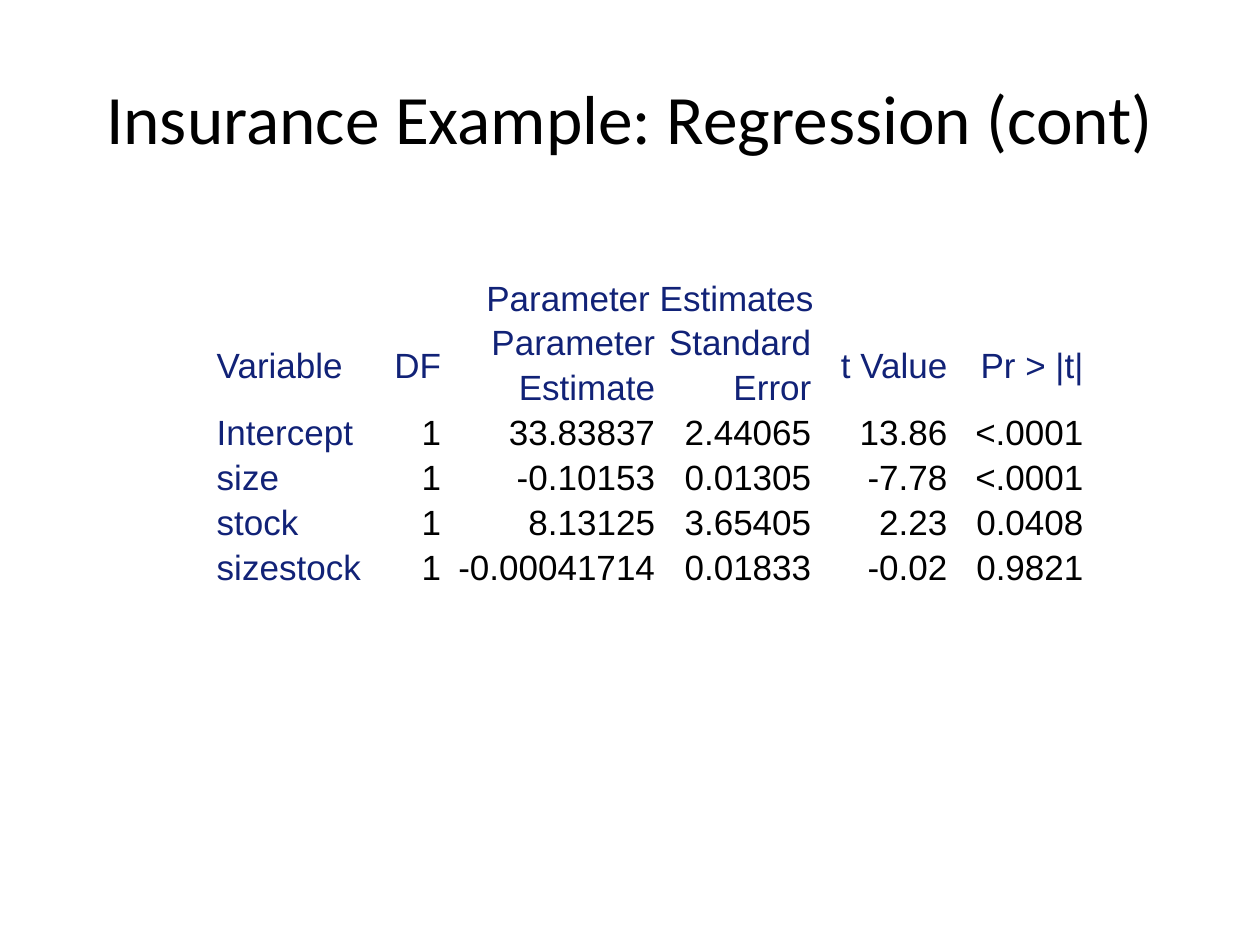
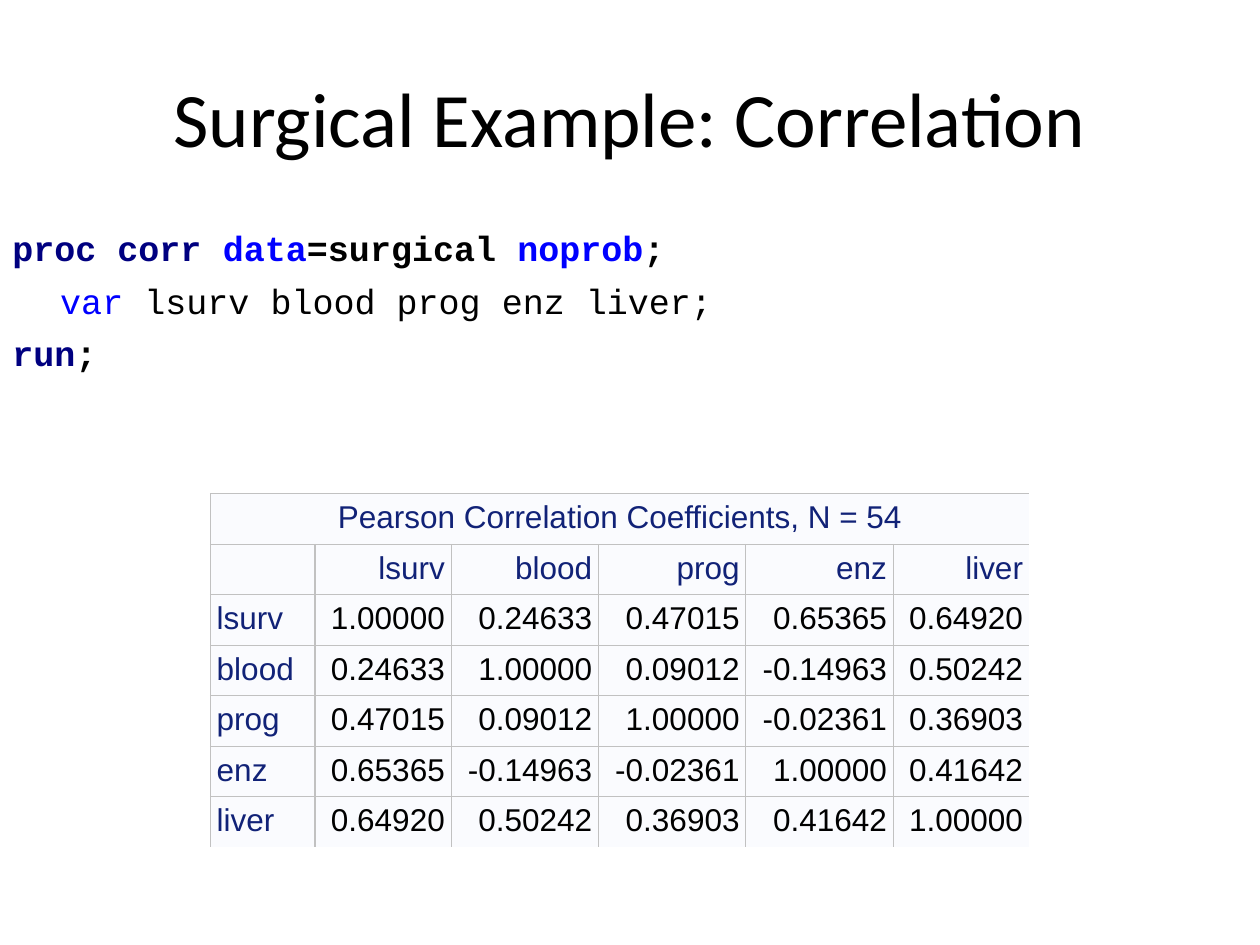
"""Build two slides of regression and correlation results."""
from lxml import etree
from pptx import Presentation
from pptx.dml.color import RGBColor
from pptx.enum.text import MSO_ANCHOR, PP_ALIGN
from pptx.oxml.ns import qn
from pptx.util import Inches, Pt

LEFT, MID, RIGHT = PP_ALIGN.LEFT, PP_ALIGN.CENTER, PP_ALIGN.RIGHT
TOP, CENTER = MSO_ANCHOR.TOP, MSO_ANCHOR.MIDDLE
BLACK, NAVY, CODE, BLUE = "000000", "112277", "000080", "0000FF"
PALE, GREY = "FAFBFE", "C1C1C1"


def color(code):
    return RGBColor.from_string(code)


class Deck:
    def __init__(self):
        self.show = Presentation()
        self.show.slide_width, self.show.slide_height = Inches(10), Inches(7.5)
        self.slide = None

    def style(self, run, face, size, ink, bold=False):
        font = run.font
        font.name, font.size, font.bold = face, Pt(size), bold
        font.color.rgb = color(ink)

    def title(self, text, size):
        self.slide = self.show.slides.add_slide(self.show.slide_layouts[5])
        box = self.slide.shapes.title
        box.left, box.top = Inches(0.5), Inches(0.3)
        box.width, box.height = Inches(9), Inches(1.25)
        frame = box.text_frame
        frame.text = text
        frame.vertical_anchor = CENTER
        para = frame.paragraphs[0]
        para.alignment = MID
        self.style(para.runs[0], "Calibri", size, BLACK)

    def code(self, top, height, lines):
        box = self.slide.shapes.add_textbox(
            Inches(0), Inches(top), Inches(10), Inches(height))
        frame = box.text_frame
        frame.word_wrap = True
        for i, (inset, parts) in enumerate(lines):
            para = frame.paragraphs[0] if i == 0 else frame.add_paragraph()
            para.space_before = Pt(6)
            para._p.get_or_add_pPr().set("marL", str(Inches(inset)))
            for text, ink, bold in parts:
                run = para.add_run()
                run.text = text
                self.style(run, "Courier New", 20, ink, bold)

    def edge(self, cell, side, drawn):
        line = etree.SubElement(cell._tc.get_or_add_tcPr(), qn("a:" + side))
        if drawn:
            line.set("w", str(Pt(0.75)))
            fill = etree.SubElement(line, qn("a:solidFill"))
            etree.SubElement(fill, qn("a:srgbClr")).set("val", GREY)
        else:
            etree.SubElement(line, qn("a:noFill"))

    def table(self, top, widths, heights, rows, size, pad, anchor,
              fill=None, grid=False, space=None):
        shape = self.slide.shapes.add_table(
            len(heights), len(widths), Inches(1.67), Inches(top),
            Inches(sum(widths)), Inches(sum(heights)))
        table = shape.table
        table.first_row = table.horz_banding = False
        for col, width in zip(table.columns, widths):
            col.width = Inches(width)
        for row, height in zip(table.rows, heights):
            row.height = Inches(height)
        table.cell(0, 0).merge(table.cell(0, len(widths) - 1))
        for r in range(len(heights)):
            for c in range(len(widths)):
                cell = table.cell(r, c)
                sides = {"lnL": r > 0 or c == 0,
                         "lnR": r > 0 and c < len(widths) - 1,
                         "lnT": True,
                         "lnB": r < len(heights) - 1}
                for side, drawn in sides.items():
                    self.edge(cell, side, grid and drawn)
                if fill:
                    cell.fill.solid()
                    cell.fill.fore_color.rgb = color(fill)
                else:
                    cell.fill.background()
                cell.margin_left = cell.margin_right = Inches(0.05)
                cell.margin_top = cell.margin_bottom = Inches(pad)
                cell.vertical_anchor = anchor
                if c >= len(rows[r]):
                    continue
                para = cell.text_frame.paragraphs[0]
                para.text = rows[r][c]
                para.alignment = MID if r == 0 else RIGHT if c else LEFT
                if space:
                    para.line_spacing = space
                    para.space_before = para.space_after = Pt(5)
                ink = BLACK if r > 1 and c else NAVY
                for run in para.runs:
                    self.style(run, "Arial", size, ink)


def main():
    deck = Deck()

    deck.title("Insurance Example: Regression (cont)", 39.6)
    fit = [
        ["Parameter Estimates"],
        ["Variable", "DF", "Parameter\nEstimate", "Standard\nError",
         "t Value", "Pr > |t|"],
        ["Intercept", "1", "33.83837", "2.44065", "13.86", "<.0001"],
        ["size", "1", "-0.10153", "0.01305", "-7.78", "<.0001"],
        ["stock", "1", "8.13125", "3.65405", "2.23", "0.0408"],
        ["sizestock", "1", "-0.00041714", "0.01833", "-0.02", "0.9821"],
    ]
    deck.table(2.17, [1.39, 0.49, 1.7, 1.24, 1.08, 1.08],
               [0.35, 0.7] + [0.35] * 4, fit, 20, 0, CENTER, space=1.15)

    deck.title("Surgical Example: Correlation", 44)
    deck.code(1.75, 1.33, [
        (0, [("proc corr ", CODE, True), ("data", BLUE, True),
             ("=surgical ", BLACK, True), ("noprob", BLUE, True),
             (";", BLACK, True)]),
        (0.38, [("var ", BLUE, False),
                ("lsurv blood prog enz liver;", BLACK, False)]),
        (0, [("run", CODE, True), (";", BLACK, True)]),
    ])
    names = ["lsurv", "blood", "prog", "enz", "liver"]
    values = [
        ["1.00000", "0.24633", "0.47015", "0.65365", "0.64920"],
        ["0.24633", "1.00000", "0.09012", "-0.14963", "0.50242"],
        ["0.47015", "0.09012", "1.00000", "-0.02361", "0.36903"],
        ["0.65365", "-0.14963", "-0.02361", "1.00000", "0.41642"],
        ["0.64920", "0.50242", "0.36903", "0.41642", "1.00000"],
    ]
    pairs = [["Pearson Correlation Coefficients, N = 54"], [""] + names]
    pairs += [[name] + row for name, row in zip(names, values)]
    deck.table(3.92, [0.83, 1.08, 1.17, 1.17, 1.17, 1.08], [0.38] * 7,
               pairs, 18, 0.05, TOP, fill=PALE, grid=True)

    deck.show.save("out.pptx")


if __name__ == "__main__":
    main()
